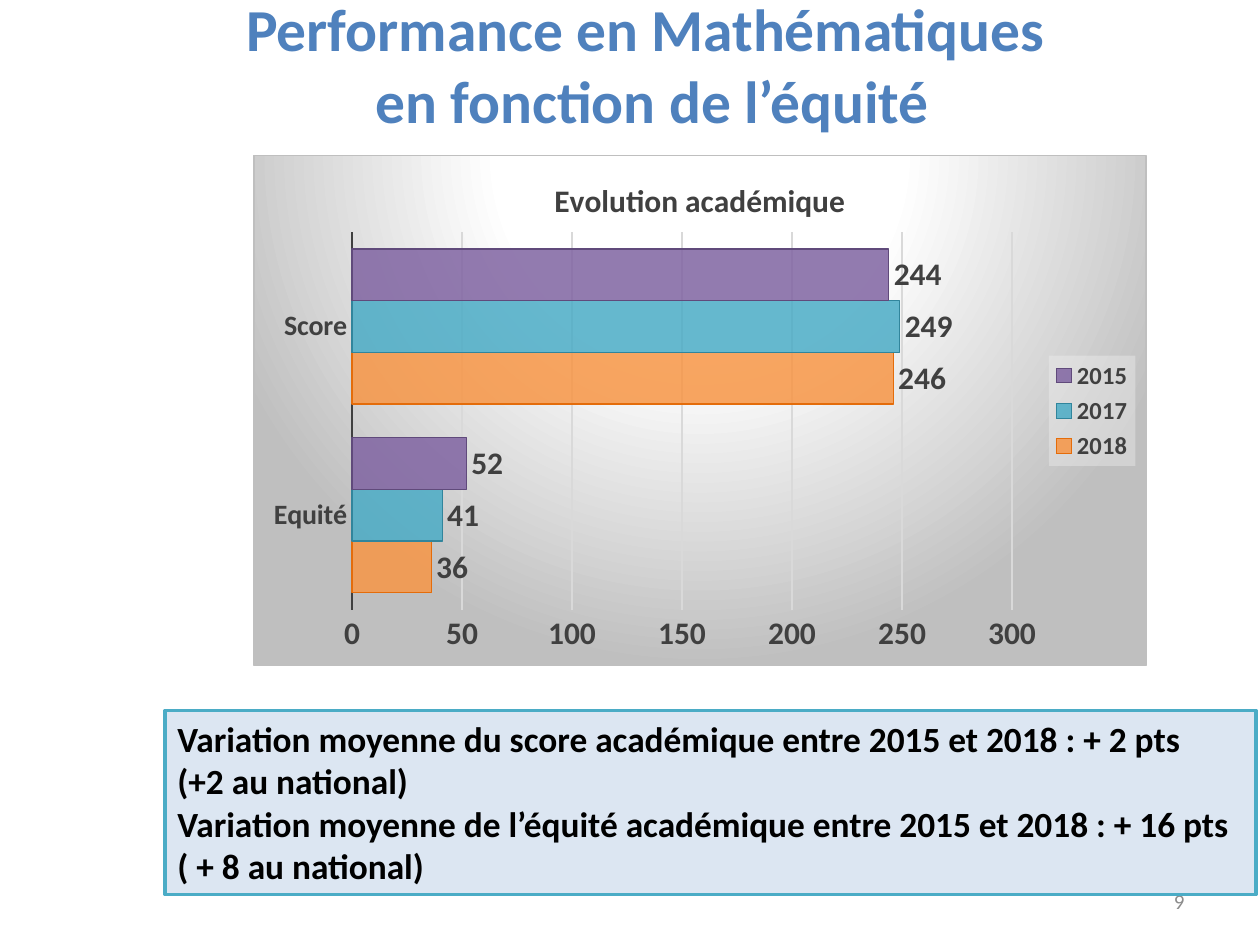
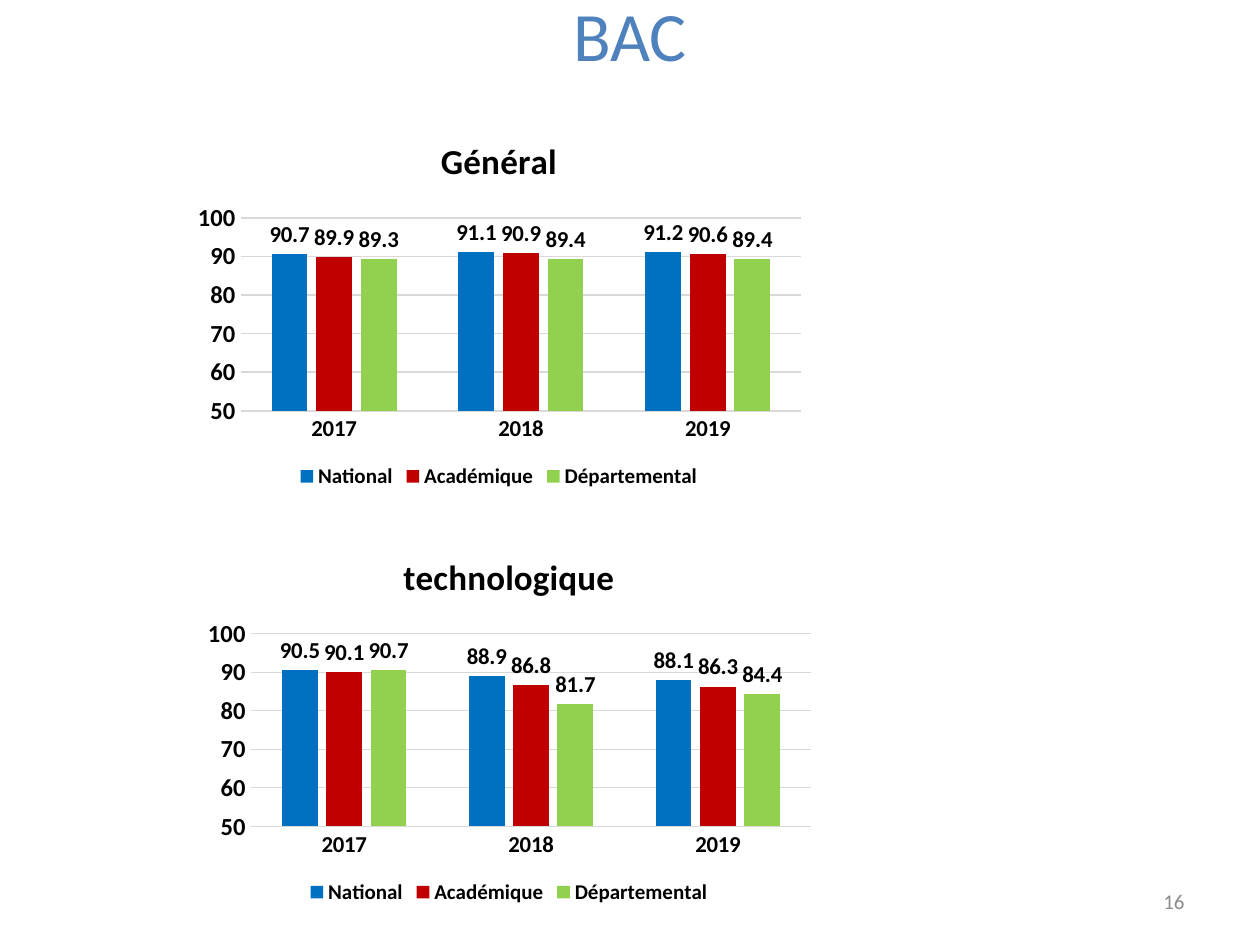
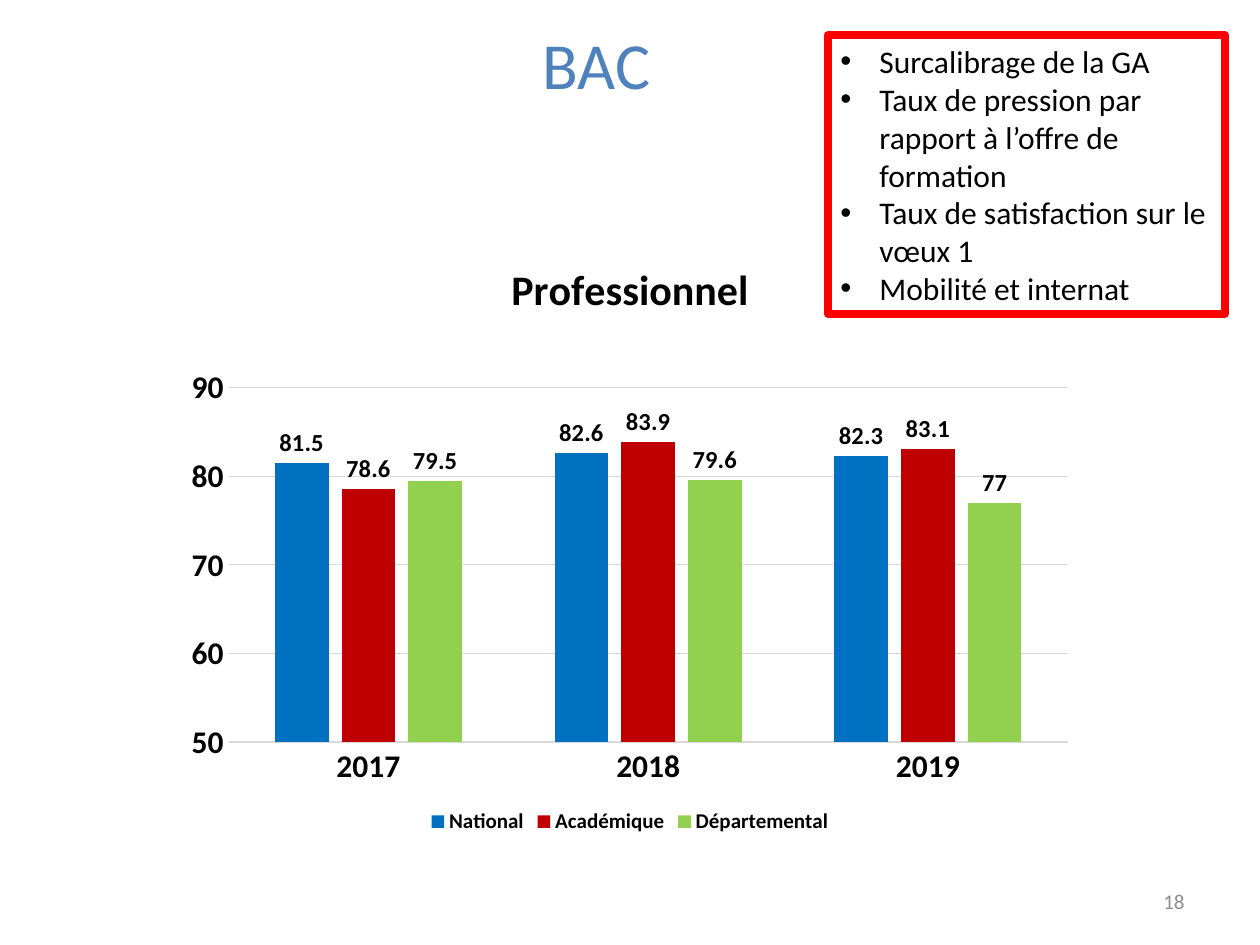
from lxml import etree
from pptx import Presentation
from pptx.chart.data import CategoryChartData
from pptx.dml.color import RGBColor
from pptx.enum.chart import XL_CHART_TYPE as ChartType
from pptx.enum.chart import XL_LABEL_POSITION as LabelPosition
from pptx.enum.chart import XL_LEGEND_POSITION as LegendPosition
from pptx.enum.chart import XL_TICK_MARK as TickMark
from pptx.enum.shapes import MSO_SHAPE as Shape
from pptx.enum.text import MSO_ANCHOR as Anchor
from pptx.enum.text import MSO_AUTO_SIZE as AutoSize
from pptx.enum.text import PP_ALIGN as Align
from pptx.oxml.ns import qn
from pptx.util import Inches, Pt

FONT = "Calibri"
COLORS = {
    "title": "4F81BD", "black": "000000", "white": "FFFFFF", "number": "8C8C8C",
    "dark": "404040", "grid": "D9D9D9", "silver": "BFBFBF", "legend": "F2F2F2",
    "note": "DCE6F2", "note_line": "4BACC6", "alert": "FF0000",
    "national": "0070C0", "academic": "C00000", "department": "92D050",
    "orange": "F79646", "orange_line": "E46C0A", "teal": "4BACC6",
    "teal_line": "31859C", "purple": "8064A2", "purple_line": "604A7B",
}
SPACES = ('xmlns:c="http://schemas.openxmlformats.org/drawingml/2006/chart" '
          'xmlns:a="http://schemas.openxmlformats.org/drawingml/2006/main"')
TITLE_ONLY, TITLE_AND_BODY = 5, 1

YEARS = ("2017", "2018", "2019")
LEVELS = (("National", "national"), ("Académique", "academic"),
          ("Départemental", "department"))


# Text and formats
def color(name):
    return RGBColor.from_string(COLORS[name])


def style_font(font, size, color_name="black", bold=False):
    formats = {"name": FONT, "size": Pt(size), "bold": bold}
    for key, value in formats.items():
        setattr(font, key, value)
    font.color.rgb = color(color_name)


def style_line(line, color_name, width):
    line.color.rgb = color(color_name)
    line.width = Pt(width)


def place(shape, area):
    for key, value in zip(("left", "top", "width", "height"), area):
        setattr(shape, key, Inches(value))


def write(shape, lines, size, color_name="black", bold=False,
          align=Align.LEFT, anchor=Anchor.MIDDLE, indent=None):
    frame = shape.text_frame
    formats = {"word_wrap": True, "auto_size": AutoSize.NONE, "vertical_anchor": anchor}
    for key, value in formats.items():
        setattr(frame, key, value)
    for index, text in enumerate(lines):
        para = frame.paragraphs[0] if index == 0 else frame.add_paragraph()
        para.alignment = align
        para.space_before = Pt(0)
        if indent:
            properties = para._p.get_or_add_pPr()
            properties.set("marL", str(Inches(indent)))
            properties.set("indent", str(Inches(-indent)))
            etree.SubElement(properties, qn("a:buChar")).set("char", "•")
        span = para.add_run()
        span.text = text
        style_font(span.font, size, color_name, bold)


# Page parts
def add_page(deck, layout, number, title, title_area, size, bold=False, anchor=Anchor.MIDDLE):
    page = deck.slides.add_slide(deck.slide_layouts[layout])
    place(page.shapes.title, title_area)
    write(page.shapes.title, title, size, "title", bold, Align.CENTER, anchor)
    box = page.shapes.add_textbox(*map(Inches, (7.17, 6.95, 2.33, 0.4)))
    write(box, [number], 12, "number", align=Align.RIGHT)
    return page


def frame_box(box, fill, line, width):
    box.fill.solid()
    box.fill.fore_color.rgb = color(fill)
    style_line(box.line, line, width)


# Chart parts
def surface(fill_xml, line_xml="<a:ln><a:noFill/></a:ln>"):
    return etree.fromstring(f"<c:spPr {SPACES}>{fill_xml}{line_xml}</c:spPr>")


def solid(name, alpha=100):
    return (f'<a:solidFill><a:srgbClr val="{COLORS[name]}">'
            f'<a:alpha val="{alpha * 1000}"/></a:srgbClr></a:solidFill>')


def set_plot_area(chart, area):
    plot_area = chart._chartSpace.chart.plotArea
    for old in plot_area.findall(qn("c:layout")):
        plot_area.remove(old)
    sizes = "".join(f'<c:{key} val="{value}"/>' for key, value in zip("xywh", area))
    plot_area.insert(0, etree.fromstring(
        f'<c:layout {SPACES}><c:manualLayout><c:layoutTarget val="inner"/>'
        f'<c:xMode val="edge"/><c:yMode val="edge"/>{sizes}</c:manualLayout></c:layout>'))


def style_axes(chart, sizes, color_name, line, limits):
    for axis, size in zip((chart.category_axis, chart.value_axis), sizes):
        axis.major_tick_mark = axis.minor_tick_mark = TickMark.NONE
        style_font(axis.tick_labels.font, size, color_name, True)
    style_line(chart.category_axis.format.line, *line)
    scale = chart.value_axis
    for key, value in zip(("minimum_scale", "maximum_scale", "major_unit"), limits):
        setattr(scale, key, value)
    scale.format.line.fill.background()
    scale.has_major_gridlines = True
    style_line(scale.major_gridlines.format.line, "grid", 0.75)


def add_bars(page, kind, area, title, categories, series, plot_area, limits,
             sizes, gap, overlap=0, text="black", axis_line=("grid", 1),
             legend=LegendPosition.BOTTOM):
    data = CategoryChartData()
    data.categories = categories
    for name, _, values in series:
        data.add_series(name, values)
    frame = page.shapes.add_chart(kind, *map(Inches, area), data)
    page.shapes._spTree.insert(2, frame._element)
    chart = frame.chart
    style_font(chart.font, 10)

    chart.has_title = True
    chart.chart_title.include_in_layout = False
    span = chart.chart_title.text_frame.paragraphs[0].add_run()
    span.text = title
    style_font(span.font, sizes["title"], text, True)

    chart.has_legend = True
    chart.legend.position = legend
    chart.legend.include_in_layout = False
    style_font(chart.legend.font, sizes["legend"], text, True)

    style_axes(chart, sizes["axes"], text, axis_line, limits)
    set_plot_area(chart, plot_area)
    plot = chart.plots[0]
    plot.vary_by_categories = False
    plot.gap_width, plot.overlap = gap, overlap
    for bars, (_, fill, _) in zip(plot.series, series):
        bars.format.fill.solid()
        bars.format.fill.fore_color.rgb = color(fill)
        labels = bars.data_labels
        labels.show_value = True
        labels.position = LabelPosition.OUTSIDE_END
        style_font(labels.font, sizes["labels"], text, True)
    return chart


def add_level_chart(page, area, title, rows, plot_area, limits, sizes, gap=172):
    series = [(*level, values) for level, values in zip(LEVELS, rows)]
    chart = add_bars(page, ChartType.COLUMN_CLUSTERED, area, title, YEARS, series,
                     plot_area, limits, sizes, gap, -24)
    chart._chartSpace.chart.addnext(surface("<a:noFill/>"))


def add_equity_chart(page):
    series = [("2018", "orange", (36, 246)), ("2017", "teal", (41, 249)),
              ("2015", "purple", (52, 244))]
    chart = add_bars(page, ChartType.BAR_CLUSTERED, (2.01, 1.23, 7.09, 4.06),
                     "Evolution académique", ("Equité", "Score"), series,
                     (0.11, 0.15, 0.74, 0.74), (0, 300, 50),
                     {"title": 18, "legend": 14, "axes": (16, 18), "labels": 18},
                     65, text="dark", axis_line=("dark", 1.5), legend=LegendPosition.RIGHT)
    # Translucent bars with darker outlines
    for bars, (_, fill, _) in zip(chart.plots[0].series, series):
        style_line(bars.format.line, fill + "_line", 0.75)
        shade = bars._element.find(qn("c:spPr")).find(qn("a:solidFill"))[0]
        etree.SubElement(shade, qn("a:alpha")).set("val", "85000")
    # Radial background and legend panel
    stops = "".join(f'<a:gs pos="{at * 1000}"><a:srgbClr val="{COLORS[name]}"/></a:gs>'
                    for at, name in ((0, "white"), (39, "white"), (100, "silver")))
    chart._chartSpace.chart.addnext(surface(
        f'<a:gradFill><a:gsLst>{stops}</a:gsLst><a:path path="circle">'
        '<a:fillToRect l="50000" t="-80000" r="50000" b="180000"/></a:path></a:gradFill>',
        f'<a:ln w="{Pt(0.75)}">{solid("silver")}</a:ln>'))
    overlay = chart.legend._element.find(qn("c:overlay"))
    overlay.addnext(surface(solid("legend", 39)))


# Slides
def build_equity(deck):
    page = add_page(deck, TITLE_ONLY, "9",
                    ["Performance en Mathématiques ", "en fonction de l’équité"],
                    (0.35, -0.11, 9.65, 1.25), 34, True, Anchor.TOP)
    add_equity_chart(page)
    note = page.shapes.add_shape(Shape.RECTANGLE, *map(Inches, (1.31, 5.64, 8.66, 1.46)))
    note.shadow.inherit = False
    frame_box(note, "note", "note_line", 2)
    write(note, ["Variation moyenne du score académique entre 2015 et 2018 : + 2 pts",
                 "(+2 au national)",
                 "Variation moyenne de l’équité académique entre 2015 et 2018 : + 16 pts",
                 "( + 8 au national)"], 20.2, bold=True, anchor=Anchor.TOP)


def build_general(deck):
    page = add_page(deck, TITLE_ONLY, "16", ["BAC"], (0.5, 0, 9, 0.54), 39.6)
    sizes = {"title": 20, "legend": 12, "axes": (13, 14), "labels": 13}
    charts = (
        ("Général", (1.46, 0.92, 5, 3), 172,
         ((90.7, 91.1, 91.2), (89.9, 90.9, 90.6), (89.3, 89.4, 89.4))),
        ("technologique", (1.54, 4.22, 5, 3), 175,
         ((90.5, 88.9, 88.1), (90.1, 86.8, 86.3), (90.7, 81.7, 84.4))),
    )
    for title, area, gap, rows in charts:
        add_level_chart(page, area, title, rows, (0.09, 0.27, 0.89, 0.51),
                        (50, 100, 10), sizes, gap)


def build_professional(deck):
    page = add_page(deck, TITLE_AND_BODY, "18", ["BAC "], (0.51, 0.28, 8.57, 0.44), 37.6)
    add_level_chart(page, (1.38, 1.86, 7.24, 4.8), "Professionnel",
                    ((81.5, 82.6, 82.3), (78.6, 83.9, 83.1), (79.5, 79.6, 77)),
                    (0.06, 0.18, 0.92, 0.66), (50, 95, 10),
                    {"title": 24, "legend": 12, "axes": (18, 18), "labels": 14})
    causes = page.placeholders[1]
    place(causes, (6.57, 0.28, 3.15, 2.21))
    frame_box(causes, "white", "alert", 4.5)
    write(causes, ["Surcalibrage de la GA",
                   "Taux de pression par rapport à l’offre de formation",
                   "Taux de satisfaction sur le vœux 1",
                   "Mobilité et internat"], 18, indent=0.31)


def main():
    deck = Presentation()
    deck.slide_width, deck.slide_height = Inches(10), Inches(7.5)
    build_equity(deck)
    build_general(deck)
    build_professional(deck)
    deck.save("out.pptx")


if __name__ == "__main__":
    main()
